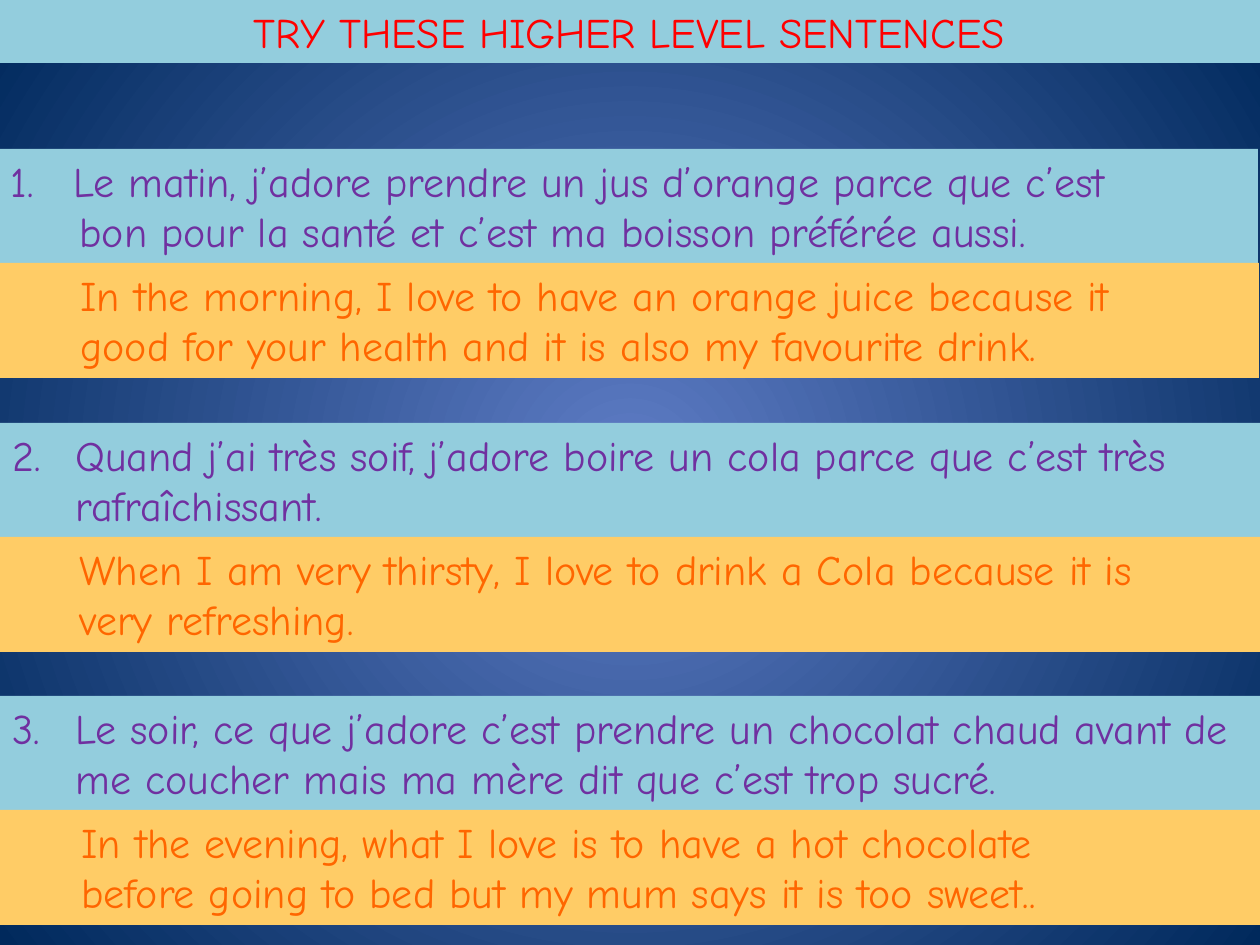
from lxml import etree
from pptx import Presentation
from pptx.dml.color import RGBColor
from pptx.enum.text import MSO_AUTO_SIZE, PP_ALIGN
from pptx.oxml.ns import qn
from pptx.util import Emu, Pt

PX = 914400 // 126
W, H = 1260, 945
TITLE_H, ROW_H = 63, 115
FONT, SIZE = "Comic Neue", 24
HANGING, INDENT = 63, 69
COLORS = {
    "blue": "93CDDD", "yellow": "FFCC66", "title": "FF0000",
    "french": "7030A0", "english": "FF6600",
    "bg_centre": "5E7CC5", "bg_edge": "00295C",
}

# Top, left of the French and English bands, English width, French, English
SENTENCES = [
    (149, -2, -1, W,
     ["Le matin, j’adore prendre un jus d’orange parce que c’est",
      "bon pour la santé et c’est ma boisson préférée aussi."],
     ["In the morning, I love to have an orange juice because it",
      "good for your health and it is also my favourite drink."]),
    (423, 0, -2, W + 5,
     ["Quand j’ai très soif, j’adore boire un cola parce que c’est très "
      "rafraîchissant."],
     ["When I am very thirsty, I love to drink a Cola because it is",
      "very refreshing."]),
    (696, 0, 0, W,
     ["Le soir, ce que j’adore c’est prendre un chocolat chaud avant de "
      "me coucher mais ma mère dit que c’est trop sucré."],
     ["In the evening, what I love is to have a hot chocolate",
      "before going to bed but my mum says it is too sweet.."]),
]


def px(n):
    return Emu(n * PX)


def rgb(name):
    return RGBColor.from_string(COLORS[name])


def set_background(s):
    """Radial gradient from the centre of the slide to its edges."""
    fill = s.background.fill
    fill.gradient()
    for stop, pos, name in zip(fill.gradient_stops, (0, 1), ("bg_centre", "bg_edge")):
        stop.position = pos
        stop.color.rgb = rgb(name)
    grad = next(s.element.iter(qn("a:gradFill")))
    grad.remove(grad.find(qn("a:lin")))
    circle = etree.Element(qn("a:path"), path="circle")
    etree.SubElement(circle, qn("a:fillToRect"), l="50000", t="50000", r="50000", b="50000")
    grad.find(qn("a:gsLst")).addnext(circle)


def set_indent(p, margin, first=0, number=None):
    pPr = p._p.get_or_add_pPr()
    pPr.set("marL", str(px(margin)))
    pPr.set("indent", str(px(first)))
    if number:
        etree.SubElement(pPr, qn("a:buFont"), typeface="+mj-lt")
        etree.SubElement(pPr, qn("a:buAutoNum"), type="arabicPeriod", startAt=str(number))


def add_band(s, box, fill, color, lines, align=PP_ALIGN.LEFT):
    """Full-width text band; returns its paragraphs."""
    band = s.shapes.add_textbox(*map(px, box))
    band.fill.solid()
    band.fill.fore_color.rgb = rgb(fill)
    tf = band.text_frame
    tf.word_wrap = True
    tf.auto_size = MSO_AUTO_SIZE.SHAPE_TO_FIT_TEXT
    for i, line in enumerate(lines):
        p = tf.add_paragraph() if i else tf.paragraphs[0]
        p.alignment = align
        r = p.add_run()
        r.text = line
        r.font.name, r.font.size = FONT, Pt(SIZE)
        r.font.color.rgb = rgb(color)
    return tf.paragraphs


def add_sentence(s, number, top, fr_left, en_left, en_width, french, english):
    """Numbered French sentence with its English translation below."""
    first, *rest = add_band(s, (fr_left, top, W, ROW_H), "blue", "french", french)
    set_indent(first, HANGING, -HANGING, number)
    translation = add_band(s, (en_left, top + ROW_H - 1, en_width, ROW_H),
                           "yellow", "english", english)
    for p in (*rest, *translation):
        set_indent(p, INDENT)


def main():
    prs = Presentation()
    prs.slide_width, prs.slide_height = px(W), px(H)
    s = prs.slides.add_slide(prs.slide_layouts[6])
    set_background(s)
    add_band(s, (-2, 0, W + 2, TITLE_H), "blue", "title",
             ["TRY THESE HIGHER LEVEL SENTENCES"], PP_ALIGN.CENTER)
    for number, sentence in enumerate(SENTENCES, 1):
        add_sentence(s, number, *sentence)
    prs.save("out.pptx")


if __name__ == "__main__":
    main()
